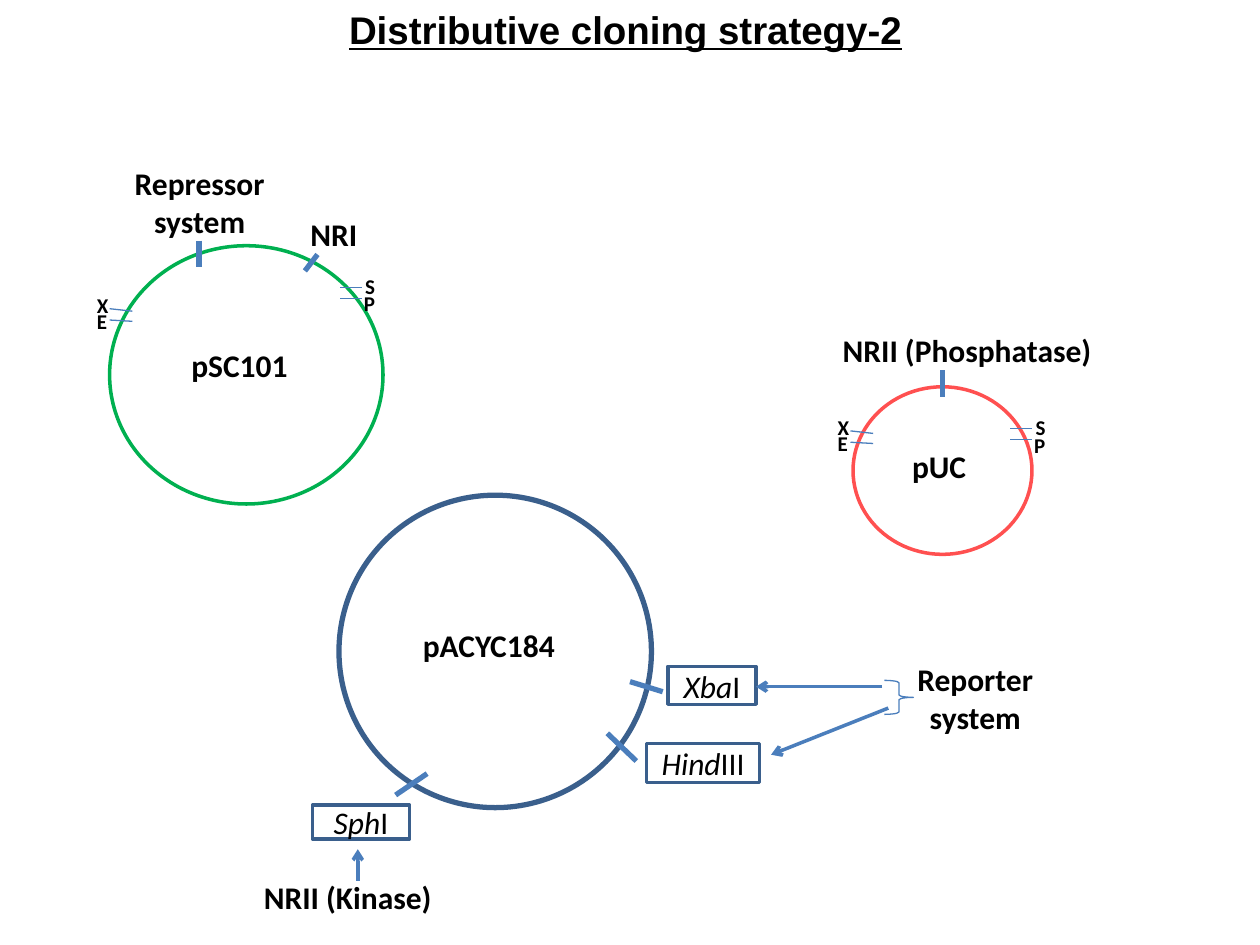
"""Build the distributive cloning strategy slide with its three plasmid maps."""
from dataclasses import dataclass

import pptx
import pptx.dml.color
import pptx.enum.shapes
import pptx.enum.text
import pptx.oxml.ns
import pptx.util
from lxml import etree
from pptx.util import Inches

RGB = pptx.dml.color.RGBColor.from_string
SHAPE = pptx.enum.shapes.MSO_SHAPE
ALIGN = pptx.enum.text.PP_ALIGN
ANCHOR = pptx.enum.text.MSO_ANCHOR
FIT = pptx.enum.text.MSO_AUTO_SIZE


@dataclass(frozen=True)
class Theme:
    text: str = "000000"
    outline: str = "3A5F8C"
    line: str = "4B7EBC"
    green: str = "00B050"
    red: str = "FF5050"
    title_font: str = "Arial"
    body_font: str = "Calibri"
    title_size: int = 22
    body_size: int = 18
    site_size: int = 12
    thin: float = 0.75
    medium: int = 2
    thick: int = 3


theme = Theme()


def add_run(p, text, size=theme.body_size, font=theme.body_font, bold=True, italic=False):
    r = p.add_run()
    r.text = text
    r.font.name, r.font.size = font, pptx.util.Pt(size)
    r.font.bold, r.font.italic = bold, italic
    r.font.color.rgb = RGB(theme.text)
    return r


def add_line(x1, y1, x2, y2, width, arrow=False):
    line = s.shapes.add_connector(pptx.enum.shapes.MSO_CONNECTOR.STRAIGHT,
                                  Inches(x1), Inches(y1), Inches(x2), Inches(y2))
    line.line.color.rgb = RGB(theme.line)
    line.line.width = pptx.util.Pt(width)
    if arrow:
        etree.SubElement(line.line._get_or_add_ln(), pptx.oxml.ns.qn("a:tailEnd"), type="arrow")
    etree.SubElement(line._element.spPr, pptx.oxml.ns.qn("a:effectLst"))


prs = pptx.Presentation()
prs.slide_width, prs.slide_height = Inches(10), Inches(7.5)
s = prs.slides.add_slide(prs.slide_layouts[5])

title = s.shapes.title
title.left, title.top, title.width, title.height = map(Inches, (2.67, 0, 4.65, 0.47))
tf = title.text_frame
tf.word_wrap = False
tf.auto_size = FIT.SHAPE_TO_FIT_TEXT
p = tf.paragraphs[0]
p.alignment = ALIGN.LEFT
add_run(p, "Distributive cloning strategy-2", theme.title_size, theme.title_font).font.underline = True

outlines = [
    (SHAPE.OVAL, (2.69, 3.93, 2.48, 2.48), theme.outline, theme.thick, None),
    (SHAPE.OVAL, (6.77, 3.07, 1.42, 1.33), theme.red, theme.medium, None),
    (SHAPE.OVAL, (0.87, 1.95, 2.17, 2.05), theme.green, theme.medium, None),
    (SHAPE.RECTANGLE, (2.48, 6.39, 0.77, 0.27), theme.outline, theme.medium, ("Sph", "I")),
    (SHAPE.RECTANGLE, (5.13, 5.9, 0.9, 0.31), theme.outline, theme.medium, ("Hind", "III")),
    (SHAPE.RECTANGLE, (5.3, 5.29, 0.7, 0.3), theme.outline, theme.medium, ("Xba", "I")),
    (SHAPE.RIGHT_BRACE, (7.02, 5.4, 0.23, 0.27), theme.line, theme.thin, None),
]
for kind, box, color, width, enzyme in outlines:
    sp = s.shapes.add_shape(kind, *map(Inches, box))
    sp.shadow.inherit = False
    sp.fill.background()
    sp.line.color.rgb = RGB(color)
    sp.line.width = pptx.util.Pt(width)
    if enzyme:
        tf = sp.text_frame
        tf.vertical_anchor = ANCHOR.MIDDLE
        p = tf.paragraphs[0]
        p.alignment = ALIGN.CENTER
        add_run(p, enzyme[0], bold=False, italic=True)
        add_run(p, enzyme[1], bold=False)

arrows = [(7, 5.45, 6, 5.45), (7.05, 5.62, 6.12, 5.99), (2.84, 6.99, 2.84, 6.74)]
for ends in arrows:
    add_line(*ends, theme.medium, arrow=True)

insert_marks = [
    (3.39, 6.14, 3.14, 6.31), (4.82, 5.82, 5.05, 6.04), (5, 5.41, 5.26, 5.49),
    (7.48, 2.94, 7.48, 3.15), (2.52, 2.02, 2.42, 2.15), (1.58, 1.91, 1.58, 2.12),
]
for ends in insert_marks:
    add_line(*ends, theme.thick)

labels = [
    ("Reporter system", (7.15, 5.19, 1.18, 0.71), theme.body_size, True),
    ("NRII (Kinase)", (1.85, 6.92, 1.82, 0.25), theme.body_size, True),
    ("pACYC184", (3.25, 4.92, 1.26, 0.4), theme.body_size, True),
    ("pUC", (7.14, 3.5, 0.63, 0.4), theme.body_size, False),
    ("NRII (Phosphatase)", (6.25, 2.58, 2.85, 0.4), theme.body_size, True),
    ("Repressor system", (0.83, 1.25, 1.51, 0.71), theme.body_size, True),
    ("pSC101", (1.42, 2.7, 0.97, 0.4), theme.body_size, False),
    ("NRI", (2.13, 1.66, 1.04, 0.4), theme.body_size, True),
]

left_sites = [("X", 0, 0, (0.2, 0.18, 0.38, 0.2)), ("E", 0, 0.13, (0.2, 0.27, 0.38, 0.28))]
right_sites = [("S", 0, 0, (-0.1, 0.16, 0.07, 0.16)), ("P", -0.01, 0.14, (-0.1, 0.25, 0.07, 0.25))]
site_groups = [
    (6.55, 3.24, left_sites), (8.12, 3.24, right_sites),
    (0.67, 2.27, left_sites), (2.8, 2.12, right_sites),
]
for x, y, sites in site_groups:
    for site, dx, dy, (x1, y1, x2, y2) in sites:
        add_line(x + x1, y + y1, x + x2, y + y2, theme.thin)
        labels.append((site, (x + dx, y + dy, 0.28, 0.3), theme.site_size, False))

for text, box, size, wrapped in labels:
    tf = s.shapes.add_textbox(*map(Inches, box)).text_frame
    tf.word_wrap = wrapped
    tf.auto_size = FIT.SHAPE_TO_FIT_TEXT
    p = tf.paragraphs[0]
    p.alignment = ALIGN.CENTER if wrapped else ALIGN.LEFT
    add_run(p, text, size)

prs.save("out.pptx")
